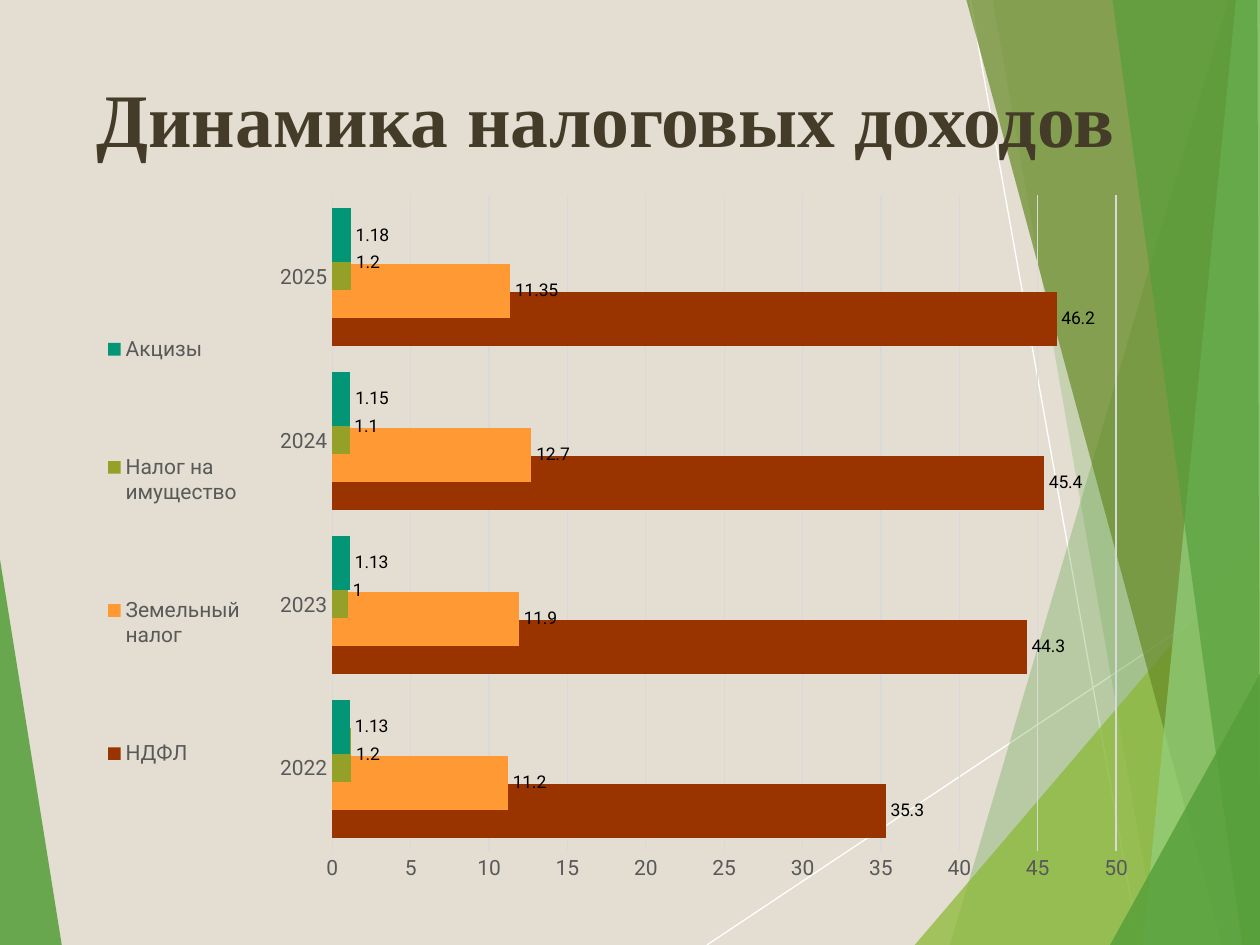
"""Build a slide with a bar chart of tax revenue by year over a faceted green backdrop."""
from lxml.etree import SubElement
from pptx import Presentation
from pptx.chart.data import CategoryChartData
from pptx.dml.color import RGBColor
from pptx.enum.chart import XL_CHART_TYPE, XL_LABEL_POSITION, XL_LEGEND_POSITION, XL_TICK_MARK
from pptx.enum.shapes import MSO_CONNECTOR
from pptx.enum.text import MSO_ANCHOR, PP_ALIGN
from pptx.oxml.ns import qn
from pptx.util import Inches, Pt

THEME = {
    "paper": "E3DED1", "ray": "FFFFFF", "heading": "443C29", "muted": "595959",
    "ink": "000000", "grid": "D9D9D9", "green": "549E39", "lime": "8AB833",
    "olive": "678A26", "mint": "93D07D",
    "heading_font": "Times New Roman", "body_font": "Roboto",
    "heading_size": 43.2, "axis_size": 12, "label_size": 10, "hairline": 0.75,
}
TAXES = {
    "НДФЛ": ("993300", (35.3, 44.3, 45.4, 46.2)),
    "Земельный налог": ("FF9933", (11.2, 11.9, 12.7, 11.35)),
    "Налог на имущество": ("94A027", (1.2, 1, 1.1, 1.2)),
    "Акцизы": ("029676", (1.13, 1.13, 1.15, 1.18)),
}
RAYS = [((56.1, 100), (100, 61)), ((77, 0), (90.4, 100))]
FACETS = [
    ("green", 85, [(0, 59.2), (4.9, 100), (0, 100)]),
    ("green", 30, [(97.5, 0), (75.4, 100), (100, 100), (100, 0)]),
    ("green", 20, [(78.8, 0), (91.9, 100), (100, 100), (100, 0)]),
    ("lime", 72, [(72.6, 100), (100, 57.2), (100, 100)]),
    ("olive", 70, [(76.7, 0), (97, 100), (100, 100), (100, 0)]),
    ("mint", 70, [(98.1, 0), (90.7, 100), (100, 100), (100, 0)]),
    ("green", 65, [(88.3, 0), (98.6, 100), (100, 100), (99.8, 0)]),
    ("green", 80, [(88.1, 100), (100, 71.3), (100, 100)]),
]

deck = Presentation()
deck.slide_width, deck.slide_height = Inches(10), Inches(7.5)
slide = deck.slides.add_slide(deck.slide_layouts[5])
slide.background.fill.solid()
slide.background.fill.fore_color.rgb = RGBColor.from_string(THEME["paper"])


def place(x, y):
    return int(deck.slide_width * x / 100), int(deck.slide_height * y / 100)


def style(font, size, color, face="body_font", bold=False):
    look = {"size": Pt(THEME[size]), "name": THEME[face], "bold": bold}
    for name, value in look.items():
        setattr(font, name, value)
    font.color.rgb = RGBColor.from_string(THEME[color])


for start, end in RAYS:
    ray = slide.shapes.add_connector(MSO_CONNECTOR.STRAIGHT, *place(*start), *place(*end))
    ray.line.color.rgb = RGBColor.from_string(THEME["ray"])
    ray.line.width = Pt(THEME["hairline"])
    SubElement(ray._element.spPr, qn("a:effectLst"))

for color, opacity, corners in FACETS:
    first, *others = [place(*corner) for corner in corners]
    outline = slide.shapes.build_freeform(*first)
    outline.add_line_segments(others, close=True)
    facet = outline.convert_to_shape()
    facet.shadow.inherit = False
    facet.line.fill.background()
    facet.fill.solid()
    facet.fill.fore_color.rgb = RGBColor.from_string(THEME[color])
    tint = facet._element.spPr.find(qn("a:solidFill"))[0]
    SubElement(tint, qn("a:alpha"), val=str(opacity * 1000))

heading = slide.shapes.title
heading.left, heading.top = place(6.65, 6.65)
heading.width, heading.height = place(89, 11.6)
heading.text_frame.text = "Динамика налоговых доходов"
heading.text_frame.vertical_anchor = MSO_ANCHOR.MIDDLE
heading.text_frame.paragraphs[0].alignment = PP_ALIGN.LEFT
style(heading.text_frame.paragraphs[0].runs[0].font,
      "heading_size", "heading", "heading_font", True)
slide.shapes._spTree.append(heading._element)

revenue = CategoryChartData()
revenue.categories = ["2022", "2023", "2024", "2025"]
for tax, (color, amounts) in TAXES.items():
    revenue.add_series(tax, amounts)
chart = slide.shapes.add_chart(
    XL_CHART_TYPE.BAR_CLUSTERED, *place(6.65, 18.5), *place(84.3, 76.67), revenue).chart
chart.has_title = False
style(chart.font, "label_size", "ink")

bars = chart.plots[0]
for name, value in {"gap_width": 49, "overlap": 48, "vary_by_categories": False}.items():
    setattr(bars, name, value)
for series, (color, amounts) in zip(bars.series, TAXES.values()):
    series.format.fill.solid()
    series.format.fill.fore_color.rgb = RGBColor.from_string(color)
    labels = series.data_labels
    labels.show_value = True
    labels.position = XL_LABEL_POSITION.OUTSIDE_END
    style(labels.font, "label_size", "ink")

years, scale = chart.category_axis, chart.value_axis
for axis in (years, scale):
    axis.major_tick_mark = axis.minor_tick_mark = XL_TICK_MARK.NONE
    style(axis.tick_labels.font, "axis_size", "muted")
scale.minimum_scale, scale.maximum_scale, scale.major_unit = 0, 50, 5
scale.has_major_gridlines = True
scale.format.line.fill.background()
for line in (years.format.line, scale.major_gridlines.format.line):
    line.color.rgb = RGBColor.from_string(THEME["grid"])
    line.width = Pt(THEME["hairline"])

chart.has_legend = True
chart.legend.position = XL_LEGEND_POSITION.LEFT
chart.legend.include_in_layout = False
style(chart.legend.font, "axis_size", "muted")

plot_area = chart._chartSpace.chart.plotArea
for old in plot_area.findall(qn("c:layout")):
    plot_area.remove(old)
plot_layout, legend_layout = (SubElement(owner, qn("c:layout"))
                              for owner in (plot_area, chart.legend._element))
plot_area.insert(0, plot_layout)
for old in chart.legend._element.findall(qn("c:layout"))[:-1]:
    chart.legend._element.remove(old)
chart.legend._element.find(qn("c:legendPos")).addnext(legend_layout)
for layout, target, bounds in (
        (plot_layout, {"layoutTarget": "inner"}, (0.234, 0.028, 0.738, 0.905)),
        (legend_layout, {}, (0.01, 0.095, 0.15, 0.85))):
    settings = {**target, "xMode": "edge", "yMode": "edge", **dict(zip("xywh", bounds))}
    manual = SubElement(layout, qn("c:manualLayout"))
    for name, value in settings.items():
        SubElement(manual, qn(f"c:{name}"), val=str(value))

deck.save("out.pptx")
